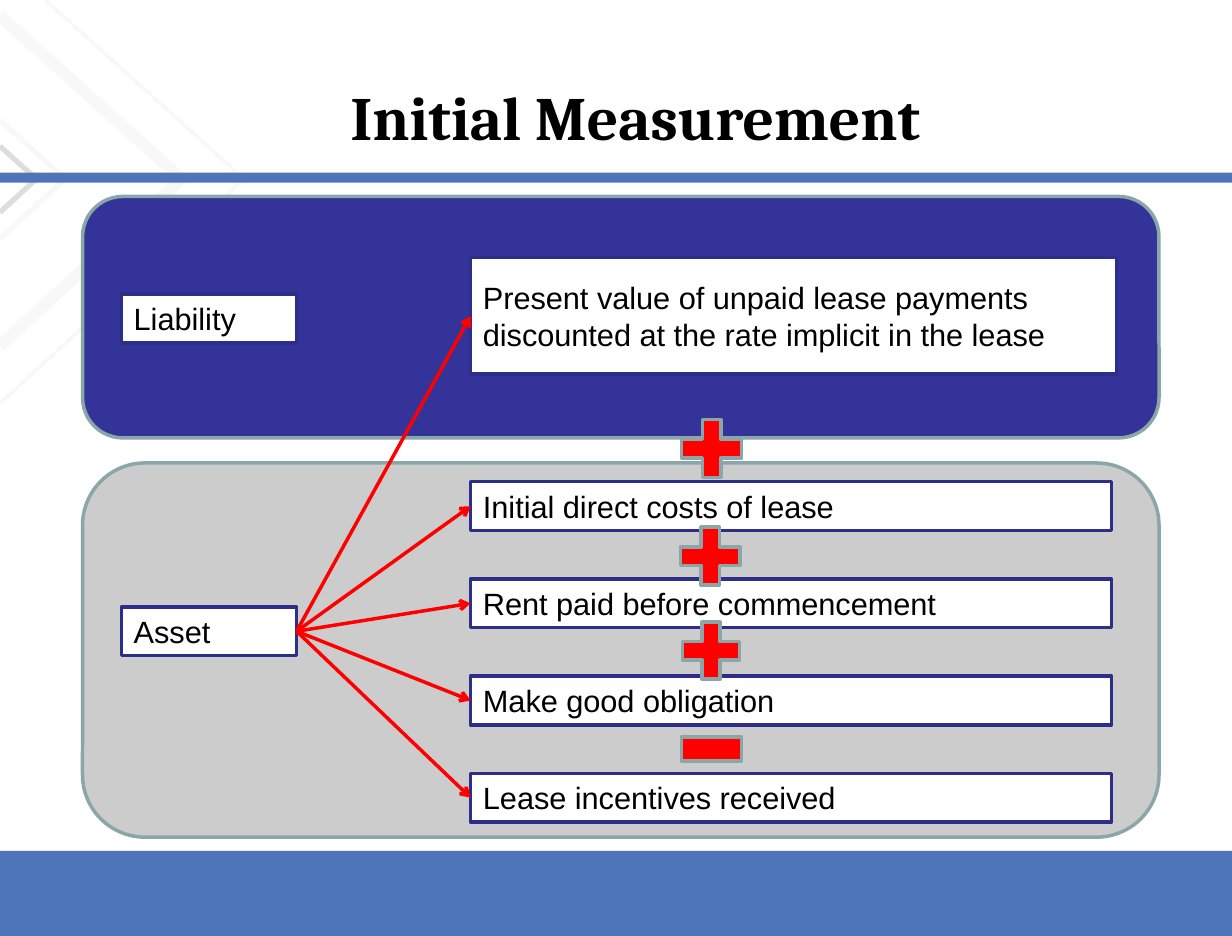
"""Build the lease Initial Measurement slide."""
from lxml.etree import SubElement
from pptx import Presentation
from pptx.dml.color import RGBColor
from pptx.enum.shapes import MSO_CONNECTOR, MSO_SHAPE
from pptx.enum.text import MSO_ANCHOR, MSO_AUTO_SIZE, PP_ALIGN
from pptx.oxml.ns import qn
from pptx.util import Cm, Inches, Pt

TITLE = "Initial Measurement"
LIABILITY = "Liability"
ASSET = "Asset"
PRESENT_VALUE = ("Present value of unpaid lease payments "
                 "discounted at the rate implicit in the lease")
ADJUSTMENTS = ["Initial direct costs of lease", "Rent paid before commencement",
               "Make good obligation", "Lease incentives received"]
OPERATORS = [
    (MSO_SHAPE.MATH_PLUS, (5.35, 4.13, 0.65, 0.63)),
    (MSO_SHAPE.MATH_PLUS, (5.37, 4.89, 0.62, 0.62)),
    (MSO_SHAPE.MATH_MINUS, (5.36, 5.58, 0.65, 0.81)),
    (MSO_SHAPE.MATH_PLUS, (5.36, 3.27, 0.65, 0.63)),
]
CHEVRONS = [(0.29, "chevron", 3), (0.52, "pale", 3), (1.45, "pale", 7), (1.95, "pale", 2)]
COLORS = {"band": "4E75B8", "chevron": "DDDDDD", "pale": "F8F8F8",
          "liability": "333399", "asset": "CCCCCC", "outline": "8AA6A8",
          "box": "FFFFFF", "border": "2D2D8A", "red": "FF0000", "text": "000000"}

SLIDE_WIDTH, SLIDE_HEIGHT = Cm(25), Cm(19)
FOOTER_TOP = 6.8
PANEL_LEFT, PANEL_WIDTH = 0.66, 8.6
LABEL_LEFT, LABEL_WIDTH = 0.97, 1.4
ITEM_LEFT, ITEM_WIDTH = 3.76, 5.12
BOX_HEIGHT = 0.39
FIRST_TOP, LAST_TOP = 3.85, 6.18
CHEVRON_Y, SLOPE_UP, SLOPE_DOWN = 1.43, 0.9, 0.92


def color(name):
    return RGBColor.from_string(COLORS[name])


def write(frame, text, font_name, size, bold=False):
    run = frame.paragraphs[0].add_run()
    run.text = text
    run.font.name, run.font.size, run.font.bold = font_name, Pt(size), bold
    run.font.color.rgb = color("text")


def add_block(slide, kind, place, fill, outline=None):
    block = slide.shapes.add_shape(kind, *map(Inches, place))
    block.shadow.inherit = False
    block.fill.solid()
    block.fill.fore_color.rgb = color(fill)
    if outline:
        block.line.color.rgb = color(outline)
        block.line.width = Pt(2)
    else:
        block.line.fill.background()
    return block


def add_box(slide, text, place):
    box = add_block(slide, MSO_SHAPE.RECTANGLE, place, "box", "border")
    frame = box.text_frame
    frame.word_wrap = True
    frame.vertical_anchor = MSO_ANCHOR.MIDDLE
    frame.paragraphs[0].alignment = PP_ALIGN.LEFT
    write(frame, text, "Arial", 17.7)
    return box


def add_chevron(slide, tip, tone, weight):
    rise = min(tip * SLOPE_UP, CHEVRON_Y)
    outline = slide.shapes.build_freeform(
        Inches(tip - rise / SLOPE_UP), Inches(CHEVRON_Y - rise))
    outline.add_line_segments(
        [(Inches(tip), Inches(CHEVRON_Y)),
         (Inches(0), Inches(CHEVRON_Y + tip * SLOPE_DOWN))], close=False)
    chevron = outline.convert_to_shape()
    chevron.shadow.inherit = False
    chevron.fill.background()
    chevron.line.color.rgb = color(tone)
    chevron.line.width = Pt(weight)


def add_arrow(slide, source, target):
    arrow = slide.shapes.add_connector(MSO_CONNECTOR.STRAIGHT, 0, 0, 0, 0)
    arrow.begin_connect(source, 3)
    arrow.end_connect(target, 1)
    arrow.line.color.rgb = color("red")
    arrow.line.width = Pt(2)
    SubElement(arrow.line._get_or_add_ln(), qn("a:tailEnd"), type="arrow")
    SubElement(arrow._element.spPr, qn("a:effectLst"))


def main():
    deck = Presentation()
    deck.slide_width, deck.slide_height = SLIDE_WIDTH, SLIDE_HEIGHT
    slide = deck.slides.add_slide(deck.slide_layouts[5])

    width = SLIDE_WIDTH.inches
    footer_height = SLIDE_HEIGHT.inches - FOOTER_TOP
    add_block(slide, MSO_SHAPE.RECTANGLE, (0, FOOTER_TOP, width, footer_height), "band")
    for chevron in CHEVRONS:
        add_chevron(slide, *chevron)
    add_block(slide, MSO_SHAPE.RECTANGLE, (0, 1.38, width, 0.08), "band")

    title = slide.shapes.title
    title.left, title.top = Inches(1.2), Inches(0.3)
    title.width, title.height = Inches(7.75), Inches(1.25)
    title.text_frame.auto_size = MSO_AUTO_SIZE.NONE
    title.text_frame.vertical_anchor = MSO_ANCHOR.MIDDLE
    title.text_frame.paragraphs[0].alignment = PP_ALIGN.CENTER
    write(title.text_frame, TITLE, "Cambria", 35.4, bold=True)

    for fill, top, height in (("asset", 3.7, 2.99), ("liability", 1.57, 1.93)):
        add_block(slide, MSO_SHAPE.ROUNDED_RECTANGLE,
                  (PANEL_LEFT, top, PANEL_WIDTH, height), fill, "outline")

    add_box(slide, LIABILITY, (LABEL_LEFT, 2.35, LABEL_WIDTH, BOX_HEIGHT))
    asset = add_box(slide, ASSET, (LABEL_LEFT, 4.85, LABEL_WIDTH, BOX_HEIGHT))
    components = [add_box(slide, PRESENT_VALUE, (ITEM_LEFT, 2.06, 5.16, 0.93))]
    pitch = (LAST_TOP - FIRST_TOP) / (len(ADJUSTMENTS) - 1)
    for row, adjustment in enumerate(ADJUSTMENTS):
        place = (ITEM_LEFT, FIRST_TOP + row * pitch, ITEM_WIDTH, BOX_HEIGHT)
        components.append(add_box(slide, adjustment, place))

    for kind, place in OPERATORS:
        add_block(slide, kind, place, "red", "outline")
    for component in components:
        add_arrow(slide, asset, component)

    deck.save("out.pptx")


if __name__ == "__main__":
    main()
